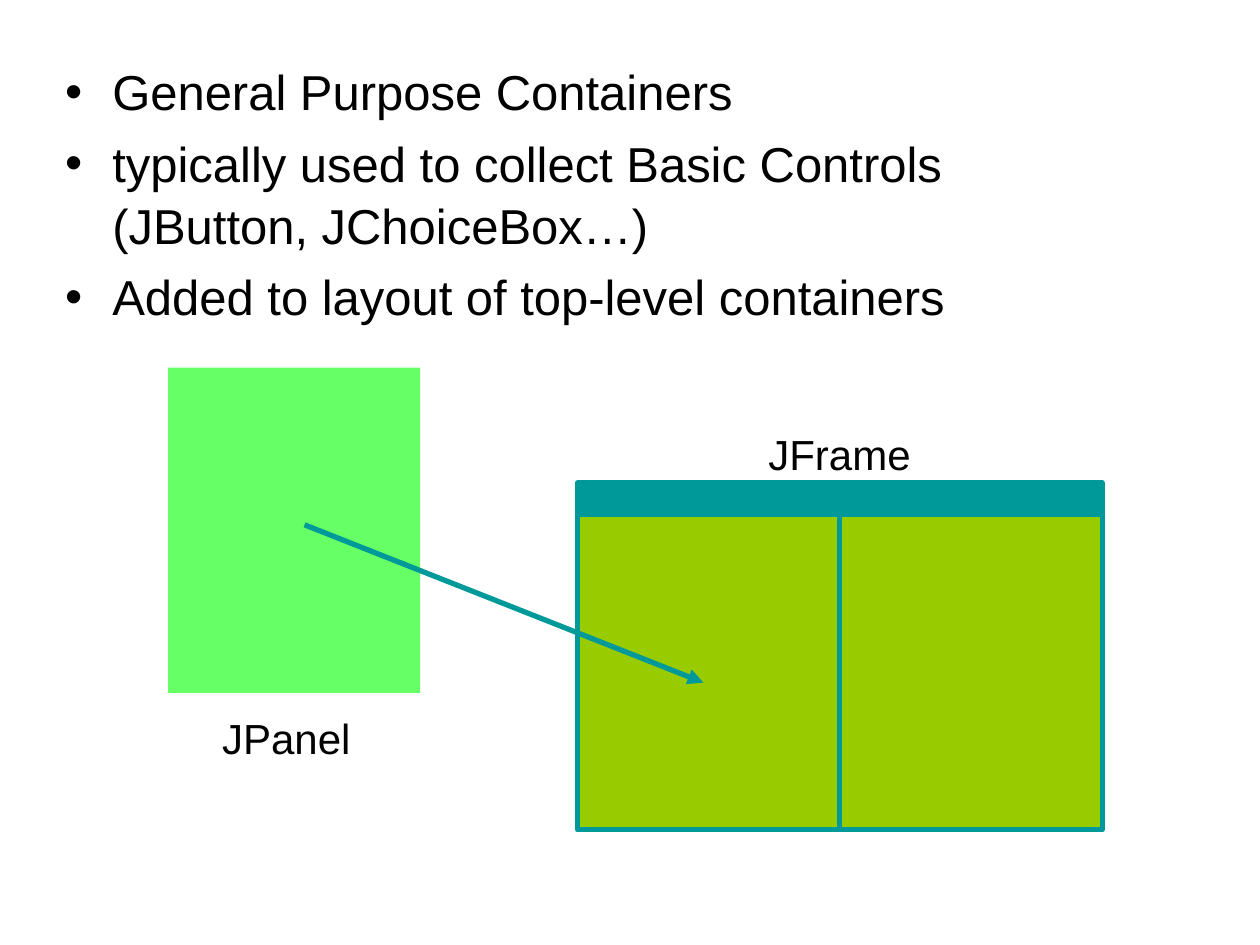
from lxml.etree import SubElement
from pptx import Presentation
from pptx.dml.color import RGBColor
from pptx.enum.shapes import MSO_CONNECTOR, MSO_SHAPE
from pptx.enum.text import MSO_ANCHOR, MSO_AUTO_SIZE, PP_ALIGN
from pptx.oxml.ns import qn
from pptx.util import Cm, Pt

BLACK = RGBColor(0x00, 0x00, 0x00)
TEAL = RGBColor(0x00, 0x99, 0x99)
OLIVE = RGBColor(0x99, 0xCC, 0x00)
GREEN = RGBColor(0x66, 0xFF, 0x66)


def format_paragraph(paragraph, size, **paragraph_format):
    font_format = {"name": "Arial", "size": Pt(size), "bold": False}
    for name, value in font_format.items():
        setattr(paragraph.font, name, value)
    paragraph.font.color.rgb = BLACK
    for name, value in {"line_spacing": 1.05, **paragraph_format}.items():
        setattr(paragraph, name, value)


def add_rectangle(left, top, width, height, fill, outlined=True):
    shape = slide.shapes.add_shape(
        MSO_SHAPE.RECTANGLE, Cm(left), Cm(top), Cm(width), Cm(height))
    shape.shadow.inherit = False
    shape.fill.solid()
    shape.fill.fore_color.rgb = fill
    if outlined:
        shape.line.color.rgb = TEAL
        shape.line.width = Pt(3)
    else:
        shape.line.fill.background()


presentation = Presentation()
presentation.slide_width, presentation.slide_height = Cm(25.4), Cm(19.05)
slide = presentation.slides.add_slide(presentation.slide_layouts[1])
title = slide.shapes.title
title.element.getparent().remove(title.element)

# Bullet list
body = slide.placeholders[1]
body_box = {"left": Cm(1.06), "top": Cm(1.06), "width": Cm(21.38), "height": Cm(6.99)}
for name, value in body_box.items():
    setattr(body, name, value)
body.text_frame.vertical_anchor = MSO_ANCHOR.TOP
body.text_frame.auto_size = MSO_AUTO_SIZE.NONE
body.text_frame.text = "\n".join([
    "General Purpose Containers",
    "typically used to collect Basic Controls (JButton, JChoiceBox…)",
    "Added to layout of top-level containers",
])
for paragraph in body.text_frame.paragraphs:
    format_paragraph(paragraph, 28, space_before=Pt(5.6), alignment=PP_ALIGN.LEFT)
    properties = paragraph._p.get_or_add_pPr()
    properties.set("marL", str(Cm(0.95)))
    properties.set("indent", str(Cm(-0.95)))
    SubElement(properties, qn("a:buFont"), typeface="Arial")
    SubElement(properties, qn("a:buChar"), char="•")

# Frame: two panes under a title bar
frame_left, frame_top, pane_width, bar_height = 11.64, 9.74, 5.29, 0.64
for column in range(2):
    add_rectangle(frame_left + column * pane_width, frame_top + bar_height,
                  pane_width, 6.35, OLIVE)
add_rectangle(frame_left, frame_top, 2 * pane_width, bar_height, TEAL)

# Panel and the arrow that places it in the frame
add_rectangle(3.39, 7.41, 5.08, 6.56, GREEN, outlined=False)
arrow = slide.shapes.add_connector(
    MSO_CONNECTOR.STRAIGHT, Cm(6.14), Cm(10.58), Cm(14.18), Cm(13.76))
arrow.line.color.rgb = TEAL
arrow.line.width = Pt(3)
SubElement(arrow.line._get_or_add_ln(), qn("a:tailEnd"), type="triangle")
SubElement(arrow._element.spPr, qn("a:effectLst"))

# Labels
for text, left, top, width in [("JPanel", 4.23, 14.18, 3.1), ("JFrame", 15.24, 8.47, 3.39)]:
    label = slide.shapes.add_textbox(Cm(left), Cm(top), Cm(width), Cm(1.27))
    label.text_frame.word_wrap = False
    label.text_frame.auto_size = MSO_AUTO_SIZE.SHAPE_TO_FIT_TEXT
    label.text_frame.text = text
    format_paragraph(label.text_frame.paragraphs[0], 24)

presentation.save("out.pptx")
